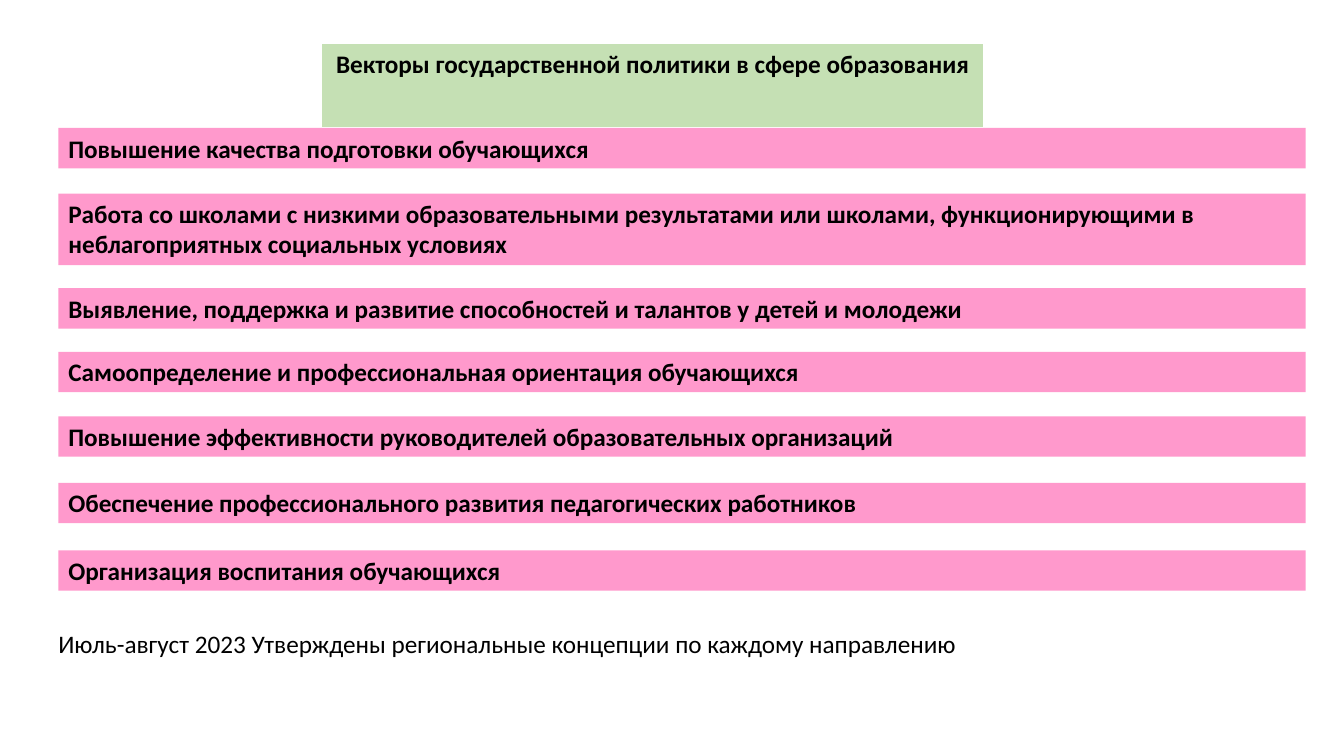
from pptx import Presentation
from pptx.dml.color import RGBColor
from pptx.enum.shapes import MSO_SHAPE
from pptx.enum.text import MSO_ANCHOR, MSO_AUTO_SIZE, PP_ALIGN
from pptx.util import Pt

RECT = MSO_SHAPE.RECTANGLE
TOP = MSO_ANCHOR.TOP
GROW = MSO_AUTO_SIZE.SHAPE_TO_FIT_TEXT
LEFT, CENTER = PP_ALIGN.LEFT, PP_ALIGN.CENTER
PX = 9144
TITLE_ONLY = 5
COLORS = {"green": "C5E0B4", "pink": "FF99CC", "white": "FFFFFF", "black": "000000"}
ROW, TALL = 40, 71
GOALS = [
    (127, ROW, "Повышение качества подготовки обучающихся"),
    (192, TALL, "Работа со школами с низкими образовательными результатами или школами, "
                "функционирующими в неблагоприятных социальных условиях"),
    (286, ROW, "Выявление, поддержка и развитие способностей и талантов у детей и молодежи"),
    (349, ROW, "Самоопределение и профессиональная ориентация обучающихся"),
    (413, ROW, "Повышение эффективности руководителей образовательных организаций"),
    (479, ROW, "Обеспечение профессионального развития педагогических работников"),
    (546, ROW, "Организация воспитания обучающихся"),
]


def color(name):
    return RGBColor.from_string(COLORS[name])


def paint(shape, name):
    shape.fill.solid()
    shape.fill.fore_color.rgb = color(name)


def write(shape, text, bold=True, align=LEFT):
    frame = shape.text_frame
    frame.text = text
    frame.word_wrap = True
    frame.auto_size = GROW
    frame.vertical_anchor = TOP
    para = frame.paragraphs[0]
    para.alignment = align
    para.font.name = "Calibri"
    para.font.size = Pt(18)
    para.font.bold = bold
    para.font.color.rgb = color("black")


def add_title(slide, box, text):
    title = slide.shapes.title
    title.left, title.top, title.width, title.height = [n * PX for n in box]
    paint(title, "green")
    title.line.color.rgb = color("white")
    title.line.width = Pt(1)
    write(title, text, align=CENTER)


def add_bar(slide, box, text):
    bar = slide.shapes.add_shape(RECT, *[n * PX for n in box])
    bar.shadow.inherit = False
    paint(bar, "pink")
    bar.line.fill.background()
    write(bar, text)


def add_note(slide, box, text):
    note = slide.shapes.add_textbox(*[n * PX for n in box])
    write(note, text, bold=False)


def main():
    deck = Presentation()
    deck.slide_width, deck.slide_height = 1333 * PX, 750 * PX
    slide = deck.slides.add_slide(deck.slide_layouts[TITLE_ONLY])
    add_title(slide, (319, 43, 657, ROW), "Векторы государственной политики в сфере образования")
    for top, height, text in GOALS:
        add_bar(slide, (58, top, 1237, height), text)
    add_note(slide, (48, 618, 1064, ROW),
             "Июль-август 2023 Утверждены региональные концепции по каждому направлению")
    deck.save("out.pptx")


if __name__ == "__main__":
    main()
